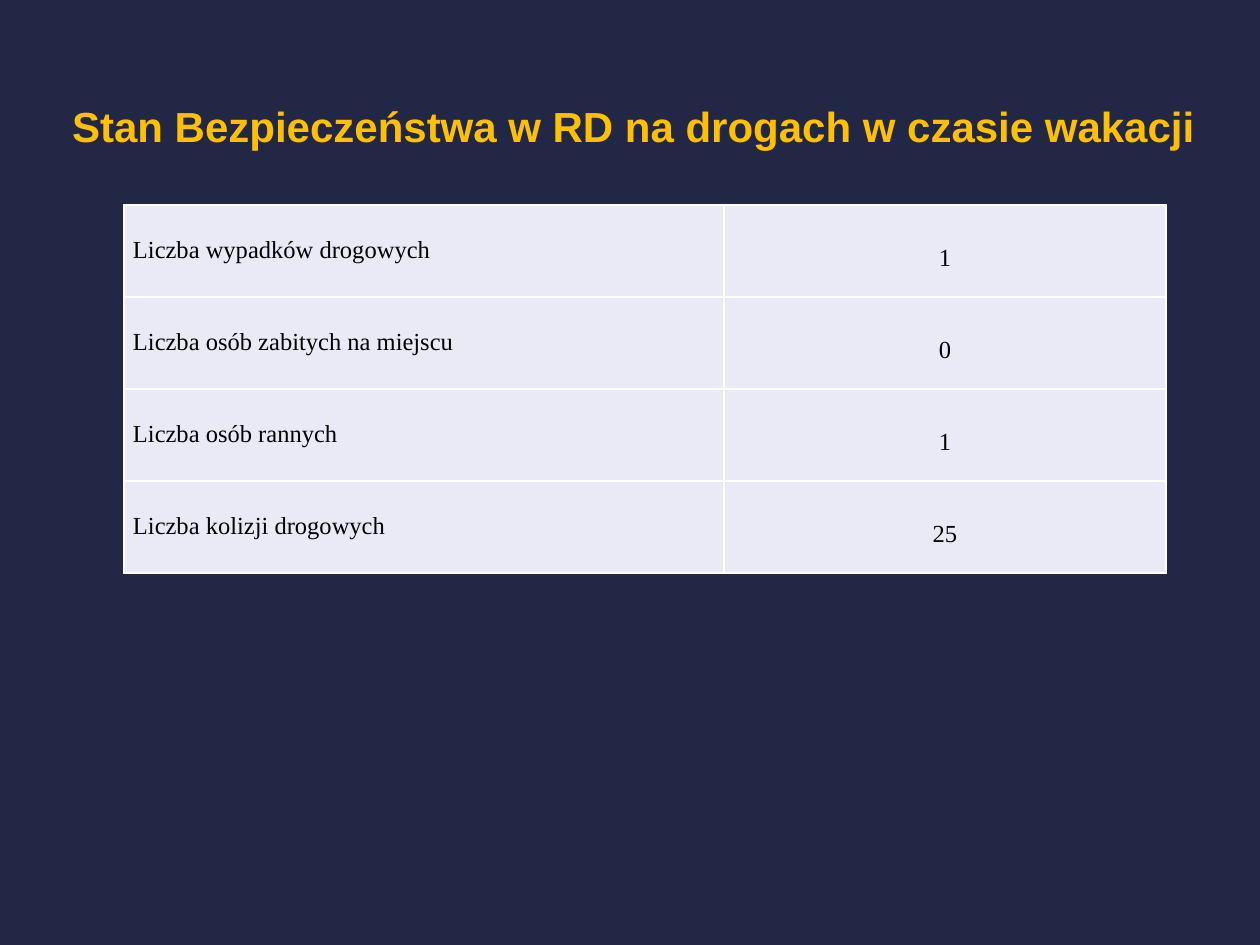
from lxml.etree import SubElement as Sub
from pptx import Presentation
from pptx.dml.color import RGBColor as Rgb
from pptx.enum.text import MSO_ANCHOR as Anchor, PP_ALIGN as Align
from pptx.oxml.ns import qn
from pptx.util import Pt

PX = 914400 // 126
NAVY = Rgb(0x21, 0x27, 0x45)
GOLD = Rgb(0xFF, 0xC0, 0x00)
PALE = Rgb(0xE9, 0xEA, 0xF5)
WHITE = Rgb(0xFF, 0xFF, 0xFF)
BLACK = Rgb(0x00, 0x00, 0x00)

TITLE = "Stan Bezpieczeństwa w RD na drogach w czasie wakacji"
ROWS = [
    ("Liczba wypadków drogowych", "1"),
    ("Liczba osób zabitych na miejscu", "0"),
    ("Liczba osób rannych", "1"),
    ("Liczba kolizji drogowych", "25"),
]


class Deck:
    head = "Arial"
    body = "Times New Roman"

    def __init__(self, wide, high):
        self.prs = Presentation()
        self.prs.slide_width, self.prs.slide_height = wide * PX, high * PX
        self.slide = self.prs.slides.add_slide(self.prs.slide_layouts[5])
        fill = self.slide.background.fill
        fill.solid()
        fill.fore_color.rgb = NAVY

    def text(self, para, words, font, size, color, bold=False):
        run = para.add_run()
        run.text = words
        run.font.name, run.font.size = font, Pt(size)
        run.font.bold, run.font.color.rgb = bold, color

    def inset(self, item, left, top, right, low):
        item.margin_left, item.margin_top = left * PX, top * PX
        item.margin_right, item.margin_bottom = right * PX, low * PX

    def title(self, words, left, top, wide, high):
        box = self.slide.shapes.title
        box.left, box.top = left * PX, top * PX
        box.width, box.height = wide * PX, high * PX
        frame = box.text_frame
        frame.word_wrap = True
        frame.vertical_anchor = Anchor.MIDDLE
        self.inset(frame, 13, 23, 24, 6)
        para = frame.paragraphs[0]
        para.alignment = Align.CENTER
        self.text(para, words, self.head, 24, GOLD, True)

    def border(self, cell, color, width):
        """Line all four sides; the lines must come before the fill."""
        props = cell._tc.get_or_add_tcPr()
        for side in ("a:lnL", "a:lnR", "a:lnT", "a:lnB"):
            line = Sub(props, qn(side), w=str(Pt(width)))
            fill = Sub(line, qn("a:solidFill"))
            Sub(fill, qn("a:srgbClr"), val=str(color))

    def cell(self, cell, words, align, drop):
        """Fill one cell, with its text set drop px below the top edge."""
        self.border(cell, WHITE, 0.96)
        cell.fill.solid()
        cell.fill.fore_color.rgb = PALE
        cell.vertical_anchor = Anchor.TOP
        self.inset(cell, 9, drop, 9, 6)
        para = cell.text_frame.paragraphs[0]
        para.alignment = align
        self.text(para, words, self.body, 14, BLACK)

    def table(self, rows, left, top, cols, high):
        grid = self.slide.shapes.add_table(
            len(rows), len(cols), left * PX, top * PX,
            sum(cols) * PX, len(rows) * high * PX).table
        grid.first_row = grid.horz_banding = False
        for col, wide in zip(grid.columns, cols):
            col.width = wide * PX
        for row, (label, value) in zip(grid.rows, rows):
            row.height = high * PX
            self.cell(row.cells[0], label, Align.LEFT, 32)
            self.cell(row.cells[1], value, Align.CENTER, 40)


def main():
    deck = Deck(1260, 945)
    deck.title(TITLE, 54, 38, 1170, 158)
    deck.table(ROWS, 124, 205, (600, 442), 92)
    deck.prs.save("out.pptx")


if __name__ == "__main__":
    main()
